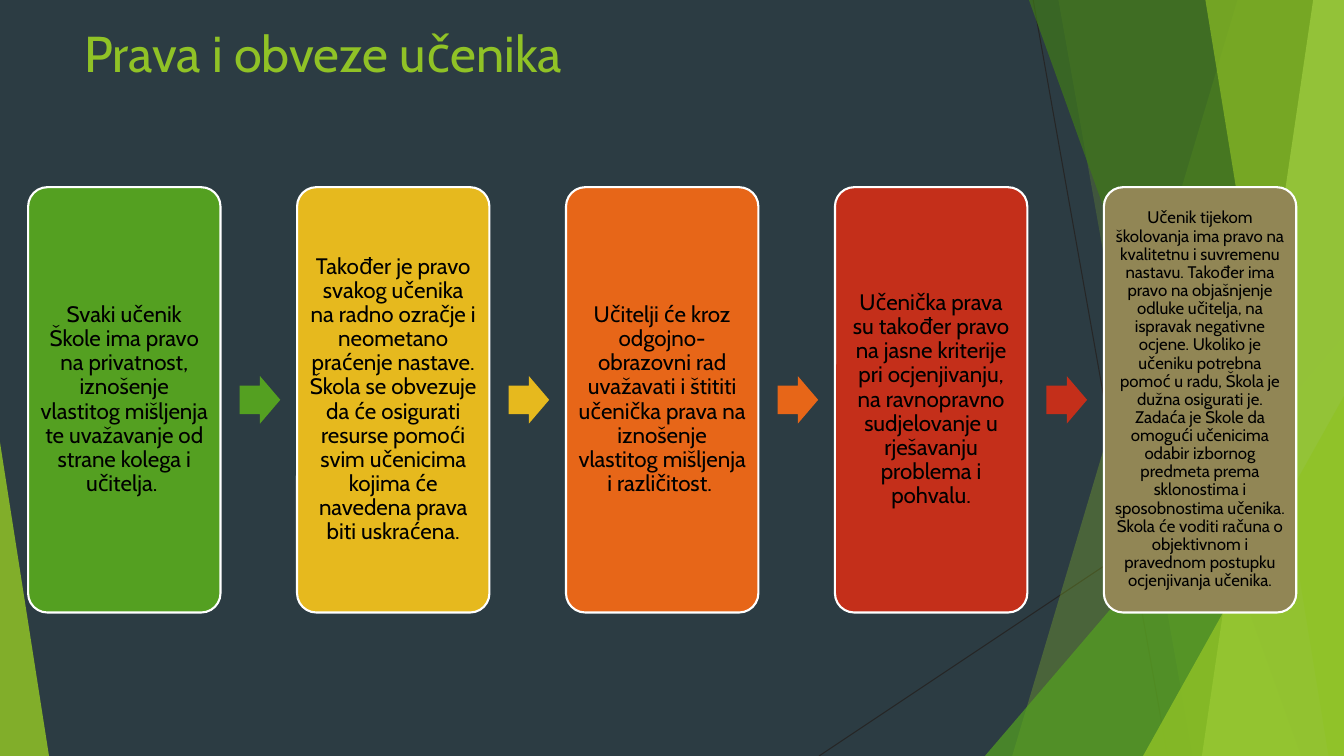
import pptx
import pptx.util
import pptx.dml.color
import pptx.enum.shapes
import pptx.enum.text
import pptx.oxml
import pptx.oxml.ns
from dataclasses import dataclass

Pt = pptx.util.Pt
Shape = pptx.enum.shapes.MSO_SHAPE
Align = pptx.enum.text.PP_ALIGN
Anchor = pptx.enum.text.MSO_ANCHOR

WIDE, HIGH = 960, 540


@dataclass
class Theme:
    font: str = "Cabin"
    back: str = "2C3C43"
    ray: str = "262626"
    lime: str = "90C226"
    green: str = "54A021"
    moss: str = "3F7819"
    pale: str = "C0E474"
    gold: str = "E6B91E"
    orange: str = "E76618"
    red: str = "C42F1A"
    olive: str = "918655"
    edge: str = "FFFFFF"
    ink: str = "000000"
    title: float = 36
    body: float = 16
    small: float = 12


def tint(code):
    return pptx.dml.color.RGBColor.from_string(code)


class Painter:
    def __init__(self, slide, theme):
        self.slide = slide
        self.theme = theme
        slide.background.fill.solid()
        slide.background.fill.fore_color.rgb = tint(theme.back)

    def paint(self, shape, color, alpha=100):
        shape.shadow.inherit = False
        shape.line.fill.background()
        shape.fill.solid()
        shape.fill.fore_color.rgb = tint(color)
        if alpha < 100:
            tone = shape.element.spPr.find(".//" + pptx.oxml.ns.qn("a:srgbClr"))
            ns = pptx.oxml.ns.nsdecls("a")
            tone.append(pptx.oxml.parse_xml(f'<a:alpha {ns} val="{alpha * 1000}"/>'))

    def ray(self, x1, y1, x2, y2):
        line = self.slide.shapes.add_connector(
            pptx.enum.shapes.MSO_CONNECTOR.STRAIGHT, Pt(x1), Pt(y1), Pt(x2), Pt(y2))
        line.line.color.rgb = tint(self.theme.ray)
        line.line.width = Pt(0.75)
        ns = pptx.oxml.ns.nsdecls("a")
        line.element.spPr.append(pptx.oxml.parse_xml(f"<a:effectLst {ns}/>"))

    def facet(self, top, base, color, alpha):
        """Full-height pane from a slanted left side to the slide's right edge."""
        pen = self.slide.shapes.build_freeform(Pt(top), 0)
        spots = [(WIDE, 0), (WIDE, HIGH), (base, HIGH)]
        pen.add_line_segments([(Pt(x), Pt(y)) for x, y in spots], close=True)
        self.paint(pen.convert_to_shape(), color, alpha)

    def preset(self, kind, box, color, adjust, alpha=100):
        shape = self.slide.shapes.add_shape(kind, *map(Pt, box))
        for spot, value in enumerate(adjust):
            shape.adjustments[spot] = value
        self.paint(shape, color, alpha)
        return shape

    def wedge(self, left, top, width, peak, color, alpha):
        """Triangle standing on the slide's bottom edge."""
        box = (left, top, width, HIGH - top)
        self.preset(Shape.ISOSCELES_TRIANGLE, box, color, [peak], alpha)

    def label(self, frame, text, size, color, align):
        frame.word_wrap = True
        par = frame.paragraphs[0]
        par.text = text
        par.alignment = align
        par.font.name = self.theme.font
        par.font.size = Pt(size)
        par.font.color.rgb = tint(color)
        return par

    def title(self, box, text):
        frame = self.slide.shapes.add_textbox(*map(Pt, box)).text_frame
        frame.vertical_anchor = Anchor.TOP
        self.label(frame, text, self.theme.title, self.theme.lime, Align.LEFT)

    def card(self, box, color, text, size):
        shape = self.preset(Shape.ROUNDED_RECTANGLE, box, color, [0.1])
        shape.line.color.rgb = tint(self.theme.edge)
        shape.line.width = Pt(1.5)
        frame = shape.text_frame
        frame.vertical_anchor = Anchor.MIDDLE
        inset = Pt(size * 0.3)
        frame.margin_left = frame.margin_right = inset
        frame.margin_top = frame.margin_bottom = inset
        par = self.label(frame, text, size, self.theme.ink, Align.CENTER)
        par.line_spacing = 0.9

    def arrow(self, box, color):
        self.preset(Shape.RIGHT_ARROW, box, color, [0.6, 0.5])


def main():
    deck = pptx.Presentation()
    deck.slide_width, deck.slide_height = Pt(WIDE), Pt(HIGH)
    look = Theme()
    art = Painter(deck.slides.add_slide(deck.slide_layouts[6]), look)

    # Backdrop of rays and translucent panes
    art.ray(738, 0, 834, HIGH)
    art.ray(WIDE, 290, 585, HIGH)
    art.facet(884, 723, look.lime, 30)
    art.facet(756, 852, look.lime, 20)
    art.wedge(703.5, 240, 256.5, 1, look.green, 72)
    art.facet(735, 929.5, look.moss, 70)
    art.facet(938, 858.5, look.pale, 70)
    art.facet(861, 949, look.lime, 65)
    art.wedge(816.5, 283, 143.5, 1, look.lime, 80)
    art.wedge(0, 316, 35, 0, look.lime, 85)

    # Heading
    art.title((53.3, 12, 677, 104), "Prava i obveze učenika")

    # Chain of cards, each joined to the next by an arrow
    cards = [
        (look.green, look.body,
         "Svaki učenik Škole ima pravo na privatnost, iznošenje vlastitog "
         "mišljenja te uvažavanje od strane kolega i učitelja. "),
        (look.gold, look.body,
         "Također je pravo svakog učenika na radno ozračje i neometano "
         "praćenje nastave. Škola se obvezuje da će osigurati resurse pomoći "
         "svim učenicima kojima će navedena prava biti uskraćena."),
        (look.orange, look.body,
         "Učitelji će kroz odgojno-obrazovni rad uvažavati i štititi učenička "
         "prava na iznošenje vlastitog mišljenja i različitost. "),
        (look.red, look.body,
         "Učenička prava su također pravo na jasne kriterije pri ocjenjivanju, "
         "na ravnopravno sudjelovanje u rješavanju problema i pohvalu."),
        (look.olive, look.small,
         "Učenik tijekom školovanja ima pravo na kvalitetnu i suvremenu "
         "nastavu. Također ima pravo na objašnjenje odluke učitelja, na "
         "ispravak negativne ocjene. Ukoliko je učeniku potrebna pomoć u "
         "radu, Škola je dužna osigurati je.\n"
         "Zadaća je Škole da omogući učenicima odabir izbornog predmeta prema "
         "sklonostima i sposobnostima učenika. Škola će voditi računa o "
         "objektivnom i pravednom postupku ocjenjivanja učenika."),
    ]
    pitch = 192.1
    for step, (color, size, text) in enumerate(cards):
        left = 20.1 + step * pitch
        art.card((left, 133.7, 137.4, 303.8), color, text, size)
        if step < len(cards) - 1:
            art.arrow((left + 151.1, 268.6, 29, 34), color)

    deck.save("out.pptx")


if __name__ == "__main__":
    main()
